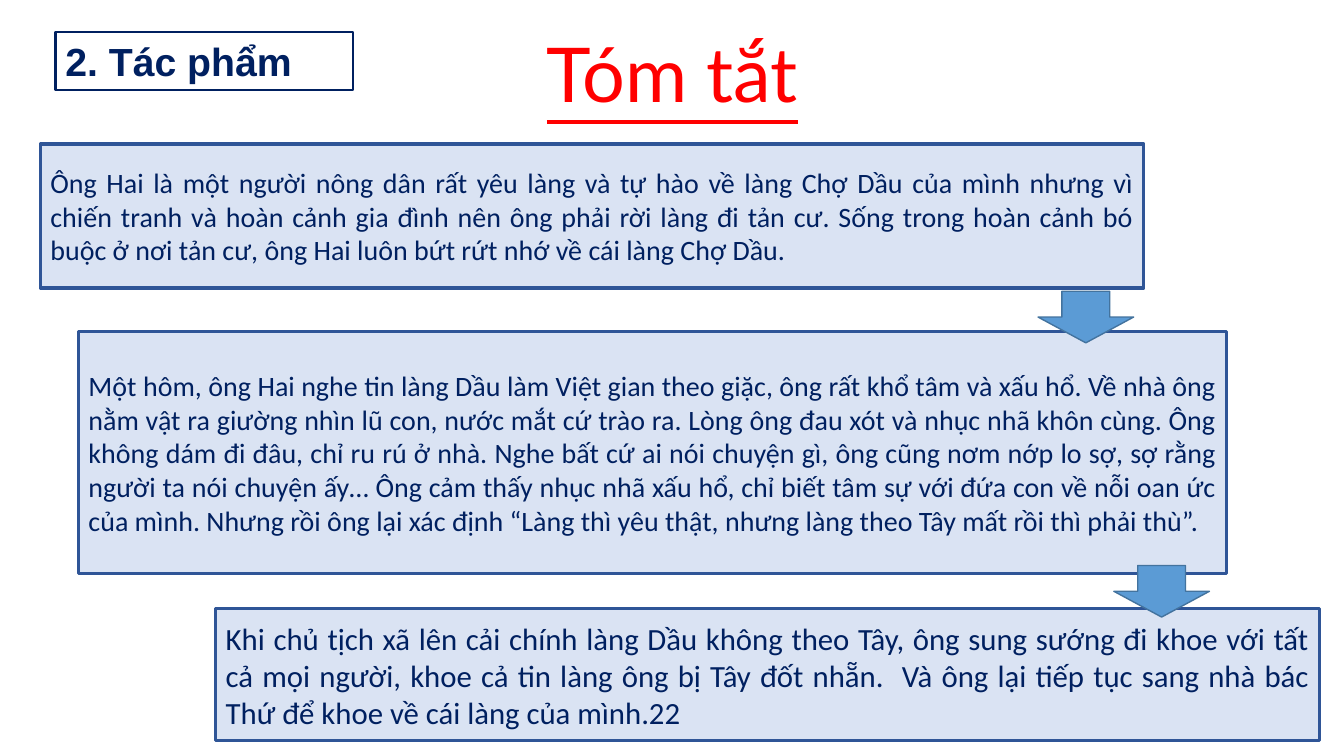
from pptx import Presentation
from pptx.dml.color import RGBColor
from pptx.enum.shapes import MSO_SHAPE
from pptx.enum.text import MSO_ANCHOR, PP_ALIGN
from pptx.util import Cm, Pt

RECT, DOWN_ARROW = MSO_SHAPE.RECTANGLE, MSO_SHAPE.DOWN_ARROW
TOP, MIDDLE = MSO_ANCHOR.TOP, MSO_ANCHOR.MIDDLE
LEFT, CENTER, JUSTIFY = PP_ALIGN.LEFT, PP_ALIGN.CENTER, PP_ALIGN.JUSTIFY

COLORS = {
    "navy": "002060",
    "red": "FF0000",
    "box": "DAE3F3",
    "box_line": "2F5597",
    "arrow": "5B9BD5",
    "arrow_line": "43739E",
}

# left, top, width, height in cm, then text size and text
STORY = [
    (1.02, 3.63, 27.81, 3.63, 20,
     "Ông Hai là một người nông dân rất yêu làng và tự hào về làng Chợ Dầu "
     "của mình nhưng vì chiến tranh và hoàn cảnh gia đình nên ông phải rời "
     "làng đi tản cư. Sống trong hoàn cảnh bó buộc ở nơi tản cư, ông Hai "
     "luôn bứt rứt nhớ về cái làng Chợ Dầu."),
    (1.98, 8.36, 28.93, 6.1, 20,
     "Một hôm, ông Hai nghe tin làng Dầu làm Việt gian theo giặc, ông rất "
     "khổ tâm và xấu hổ. Về nhà ông nằm vật ra giường nhìn lũ con, nước mắt "
     "cứ trào ra. Lòng ông đau xót và nhục nhã khôn cùng. Ông không dám đi "
     "đâu, chỉ ru rú ở nhà. Nghe bất cứ ai nói chuyện gì, ông cũng nơm nớp "
     "lo sợ, sợ rằng người ta nói chuyện ấy… Ông cảm thấy nhục nhã xấu hổ, "
     "chỉ biết tâm sự với đứa con về nỗi oan ức của mình. Nhưng rồi ông lại "
     "xác định “Làng thì yêu thật, nhưng làng theo Tây mất rồi thì phải thù”."),
    (5.44, 15.34, 27.81, 3.33, 22,
     "Khi chủ tịch xã lên cải chính làng Dầu không theo Tây, ông sung sướng "
     "đi khoe với tất cả mọi người, khoe cả tin làng ông bị Tây đốt nhẵn. "
     " Và ông lại tiếp tục sang nhà bác Thứ để khoe về cái làng của mình.22"),
]
ARROWS = [(26.16, 7.34), (28.07, 14.25)]


def rgb(name):
    return RGBColor.from_string(COLORS[name])


def add_shape(s, kind, left, top, width, height, fill, line, weight):
    sp = s.shapes.add_shape(kind, Cm(left), Cm(top), Cm(width), Cm(height))
    sp.shadow.inherit = False
    if fill:
        sp.fill.solid()
        sp.fill.fore_color.rgb = rgb(fill)
    else:
        sp.fill.background()
    sp.line.color.rgb = rgb(line)
    sp.line.width = Pt(weight)
    return sp


def set_text(sp, text, font, size, color, align, anchor):
    """Write one paragraph into a shape and return it."""
    tf = sp.text_frame
    tf.word_wrap = True
    tf.vertical_anchor = anchor
    p = tf.paragraphs[0]
    p.text = text
    p.alignment = align
    p.font.name = font
    p.font.size = Pt(size)
    p.font.color.rgb = rgb(color)
    return p


def add_heading(s):
    sp = add_shape(s, RECT, 1.4, 0.81, 7.49, 1.45, None, "navy", 1.5)
    p = set_text(sp, "2. Tác phẩm", "Arial", 28, "navy", LEFT, TOP)
    p.font.bold = True


def add_title(s):
    sp = s.shapes.add_textbox(Cm(2.34), Cm(1.27), Cm(29.21), Cm(1.4))
    p = set_text(sp, "Tóm tắt", "Lato", 54, "red", CENTER, MIDDLE)
    p.font.underline = True
    p.line_spacing = 0.9


def add_story_box(s, left, top, width, height, size, text):
    sp = add_shape(s, RECT, left, top, width, height, "box", "box_line", 2.25)
    set_text(sp, text, "Calibri", size, "navy", JUSTIFY, MIDDLE)


def add_down_arrow(s, left, top):
    add_shape(s, DOWN_ARROW, left, top, 2.41, 1.3, "arrow", "arrow_line", 1)


def main():
    prs = Presentation()
    prs.slide_width, prs.slide_height = Cm(33.87), Cm(19.05)
    s = prs.slides.add_slide(prs.slide_layouts[6])
    add_heading(s)
    for box in STORY:
        add_story_box(s, *box)
    for arrow in ARROWS:
        add_down_arrow(s, *arrow)
    add_title(s)
    prs.save("out.pptx")


if __name__ == "__main__":
    main()
